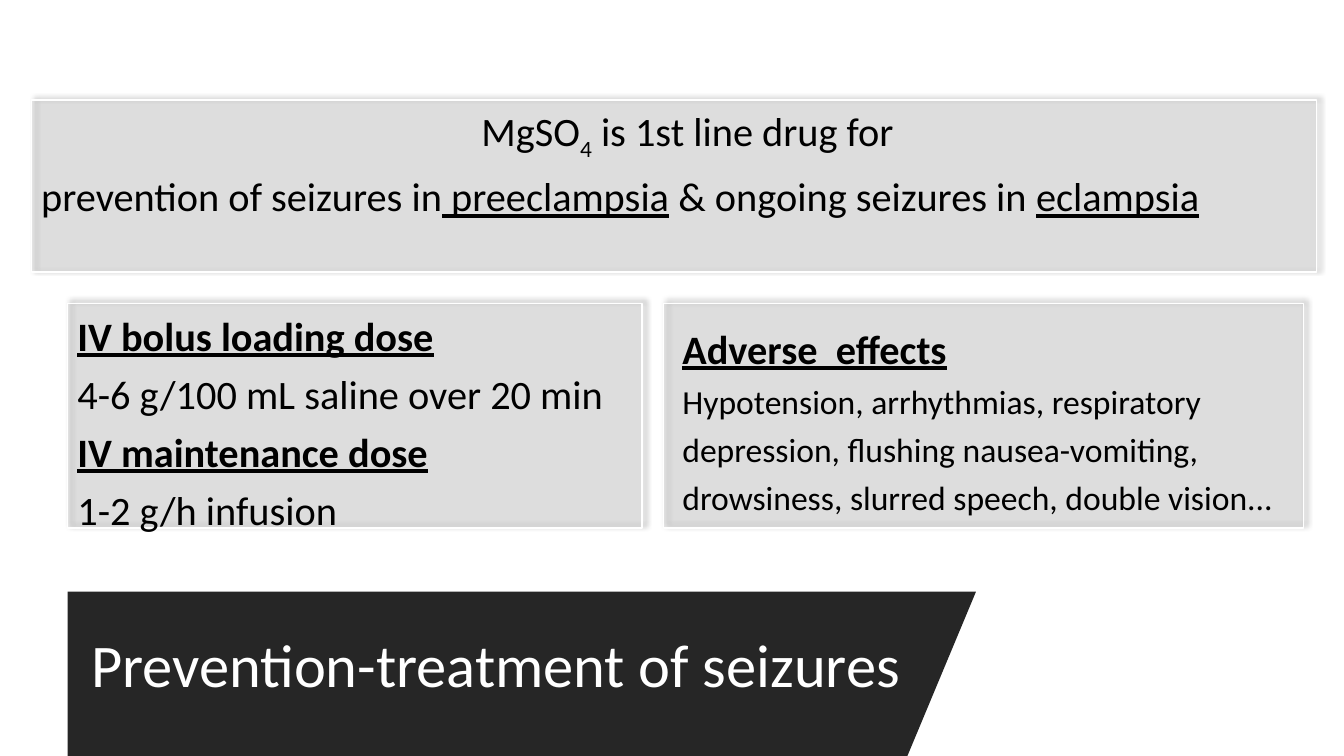
from lxml.etree import SubElement
from pptx import Presentation
from pptx.dml.color import RGBColor
from pptx.enum.shapes import MSO_SHAPE as Shape
from pptx.enum.text import MSO_AUTO_SIZE as AutoSize, PP_ALIGN as Align
from pptx.oxml.ns import qn
from pptx.util import Inches, Pt


def paint(fill, color):
    fill.solid()
    fill.fore_color.rgb = RGBColor.from_string(color)


def add_text(page, area, paragraphs, color="000000", spacing=1.2):
    box = page.shapes.add_textbox(*map(Inches, area))
    frame = box.text_frame
    frame.word_wrap = True
    frame.auto_size = AutoSize.SHAPE_TO_FIT_TEXT
    for index, (align, spans) in enumerate(paragraphs):
        para = frame.paragraphs[0] if index == 0 else frame.add_paragraph()
        para.alignment = align
        para.line_spacing = spacing
        for words, size, style in spans:
            span = para.add_run()
            span.text = words
            span.font.name = "Calibri"
            span.font.size = Pt(size)
            span.font.bold = style == "heading"
            span.font.underline = style in ("heading", "underline")
            paint(span.font.fill, color)
            if style == "subscript":
                span.font._element.set("baseline", "-25000")


deck = Presentation()
deck.slide_width, deck.slide_height = Inches(13.33), Inches(7.5)
page = deck.slides.add_slide(deck.slide_layouts[6])

panels = [(0.31, 0.99, 12.75, 1.71), (0.67, 3.01, 5.7, 2.23), (6.58, 3.01, 6.35, 2.23)]
for area in panels:
    panel = page.shapes.add_shape(Shape.RECTANGLE, *map(Inches, area))
    paint(panel.fill, "A6A6A6")
    paint(panel.line.fill, "FFFFFF")
    panel.line.width = Pt(1)
    properties = panel._element.spPr
    tint = properties.find(qn("a:solidFill"))[0]
    SubElement(tint, qn("a:alpha"), val="20000")
    effects = SubElement(properties, qn("a:effectLst"))
    shadow = SubElement(effects, qn("a:outerShdw"), blurRad=str(Pt(4)), dist=str(Pt(3)),
                        dir=str(315 * 60000), algn="bl", rotWithShape="0")
    shade = SubElement(shadow, qn("a:srgbClr"), val="000000")
    SubElement(shade, qn("a:alpha"), val="40000")

outline = page.shapes.build_freeform(Inches(0.67), Inches(5.87))
outline.add_line_segments([(Inches(x), Inches(y)) for x, y in [(9.68, 5.87), (9, 7.5), (0.67, 7.5)]])
banner = outline.convert_to_shape()
banner.shadow.inherit = False
paint(banner.fill, "262626")
banner.line.fill.background()

add_text(page, (0.47, 6.17, 9.03, 0.83),
         [(Align.CENTER, [("Prevention-treatment of seizures ", 43.2, "plain")])], "FFFFFF", 1)

add_text(page, (0.31, 0.9, 13.02, 1.26), [
    (Align.CENTER, [("MgSO", 28.8, "plain"), ("4", 28.8, "subscript"),
                    (" is 1st line drug for", 28.8, "plain")]),
    (Align.LEFT, [("prevention of seizures in", 28.8, "plain"), (" preeclampsia", 28.8, "underline"),
                  (" & ongoing seizures in ", 28.8, "plain"), ("eclampsia", 28.8, "underline")]),
])

add_text(page, (0.67, 2.94, 5.7, 2.43), [
    (Align.LEFT, [("IV bolus loading dose", 28.8, "heading")]),
    (Align.LEFT, [("4-6 g/100 mL saline over 20 min", 28.8, "plain")]),
    (Align.LEFT, [("IV maintenance dose", 28.8, "heading")]),
    (Align.LEFT, [("1-2 g/h infusion", 28.8, "plain")]),
])

add_text(page, (6.67, 3.07, 6.26, 2.14), [
    (Align.LEFT, [("Adverse  effects", 28.8, "heading")]),
    (Align.LEFT, [("Hypotension, arrhythmias, respiratory depression, flushing nausea-vomiting, "
                   "drowsiness, slurred speech, double vision...", 24, "plain")]),
])

deck.save("out.pptx")
